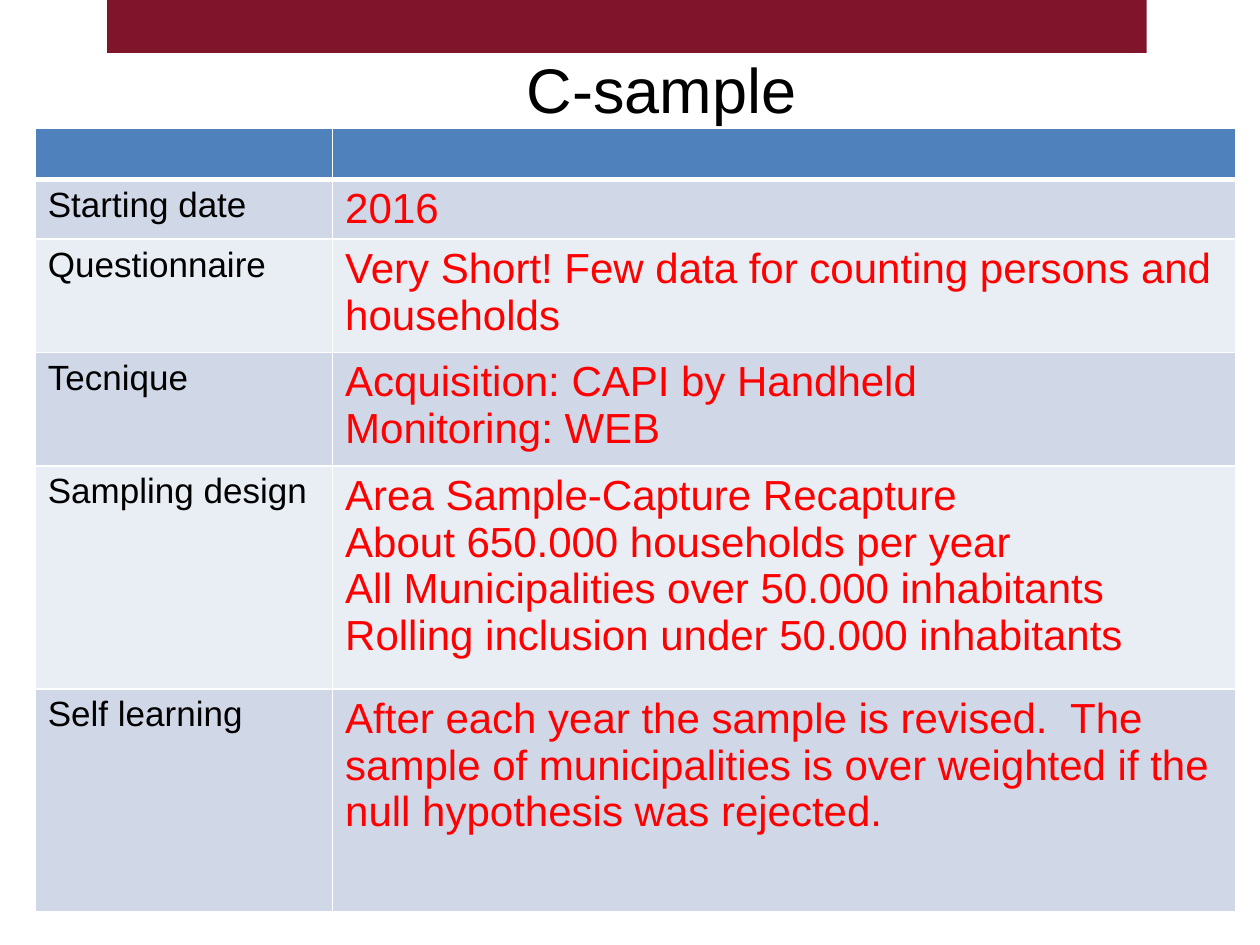
import pptx
import pptx.dml.color
import pptx.enum.shapes
import pptx.enum.text
import pptx.oxml
import pptx.oxml.ns
import pptx.util
from pptx.dml.color import RGBColor
from pptx.util import Inches

# Content
TITLE = "C-sample"
ROWS = [
    ("", []),
    ("Starting date", ["2016"]),
    ("Questionnaire", ["Very Short! Few data for counting persons and households"]),
    ("Tecnique", ["Acquisition: CAPI by Handheld", "Monitoring: WEB"]),
    ("Sampling design", [
        "Area Sample-Capture Recapture",
        "About 650.000 households per year",
        "All Municipalities over 50.000 inhabitants",
        "Rolling inclusion under 50.000 inhabitants",
    ]),
    ("Self learning", [
        "After each year the sample is revised.  The sample of municipalities "
        "is over weighted if the null hypothesis was rejected.",
    ]),
]
COLUMN_WIDTHS = [2.36, 7.17]
ROW_HEIGHTS = [0.4, 0.47, 0.9, 0.9, 1.77, 1.77]

FONT = "Arial"
BLACK = RGBColor(0x00, 0x00, 0x00)
RED = RGBColor(0xFF, 0x00, 0x00)
MAROON = RGBColor(0x7F, 0x14, 0x2A)
HEADER_BLUE = RGBColor(0x4F, 0x81, 0xBD)
BAND_DARK = RGBColor(0xD0, 0xD8, 0xE8)
BAND_LIGHT = RGBColor(0xE9, 0xED, 0xF4)
WHITE = RGBColor(0xFF, 0xFF, 0xFF)


def write(frame, lines, size, color, align=pptx.enum.text.PP_ALIGN.LEFT):
    for index, line in enumerate(lines):
        para = frame.paragraphs[0] if index == 0 else frame.add_paragraph()
        para.alignment = align
        span = para.add_run()
        span.text = line
        span.font.name = FONT
        span.font.size = pptx.util.Pt(size)
        span.font.color.rgb = color


def style_cell(cell, fill, widths):
    """Draw white borders, given as points per side, and fill the cell."""
    properties = cell._tc.get_or_add_tcPr()
    for side, width in widths.items():
        properties.append(pptx.oxml.parse_xml(
            f'<a:ln{side} {pptx.oxml.ns.nsdecls("a")} w="{pptx.util.Pt(width)}">'
            f'<a:solidFill><a:srgbClr val="{WHITE}"/></a:solidFill></a:ln{side}>'))
    cell.fill.solid()
    cell.fill.fore_color.rgb = fill


deck = pptx.Presentation()
deck.slide_width, deck.slide_height = Inches(10), Inches(7.5)
page = deck.slides.add_slide(deck.slide_layouts[5])

# Title, high enough for its descenders to clear the table
title = page.shapes.title
title.left, title.top = Inches(0.75), Inches(0.31)
title.width, title.height = Inches(9), Inches(0.78)
title.text_frame.vertical_anchor = pptx.enum.text.MSO_ANCHOR.MIDDLE
write(title.text_frame, [TITLE], 36, BLACK, align=pptx.enum.text.PP_ALIGN.CENTER)

# Top band
band = page.shapes.add_shape(pptx.enum.shapes.MSO_SHAPE.RECTANGLE,
                             Inches(0.85), 0, Inches(8.25), Inches(0.42))
band.shadow.inherit = False
band.fill.solid()
band.fill.fore_color.rgb = MAROON
band.line.fill.background()

# Table
table = page.shapes.add_table(
    len(ROWS), len(COLUMN_WIDTHS), Inches(0.28), Inches(1.02),
    Inches(sum(COLUMN_WIDTHS)), Inches(sum(ROW_HEIGHTS))).table
for column, width in zip(table.columns, COLUMN_WIDTHS):
    column.width = Inches(width)
for index, (label, details) in enumerate(ROWS):
    table.rows[index].height = Inches(ROW_HEIGHTS[index])
    fill = HEADER_BLUE if index == 0 else BAND_DARK if index % 2 else BAND_LIGHT
    borders = {"L": 1, "R": 1, "T": 3 if index == 1 else 1, "B": 3 if index == 0 else 1}
    label_cell, detail_cell = table.rows[index].cells
    for cell in (label_cell, detail_cell):
        style_cell(cell, fill, borders)
    if label:
        write(label_cell.text_frame, [label], 20, BLACK)
    write(detail_cell.text_frame, details, 24, RED)

deck.save("out.pptx")
